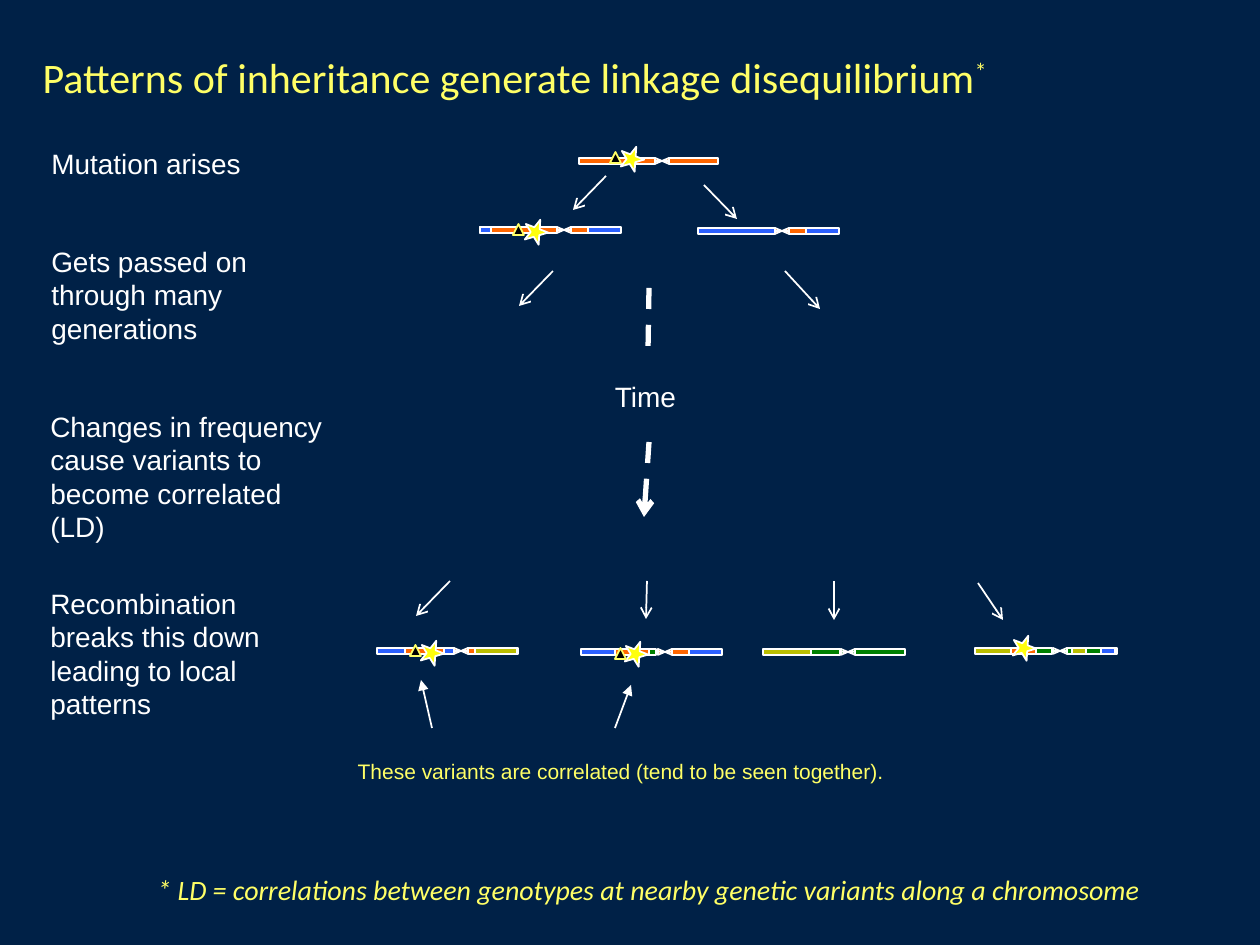
"""Builds the slide on how inheritance generates linkage disequilibrium."""
from dataclasses import dataclass

from pptx import Presentation
from pptx.dml.color import RGBColor
from pptx.enum.dml import MSO_LINE_DASH_STYLE as Dash
from pptx.enum.shapes import MSO_CONNECTOR as Connector, MSO_SHAPE as Preset
from pptx.enum.text import MSO_ANCHOR as Anchor, MSO_AUTO_SIZE as Fit, PP_ALIGN as Align
from pptx.oxml.ns import qn
from pptx.util import Emu, Pt

PX_PER_INCH = 126


def px(length):
    return Emu(round(length * 914400 / PX_PER_INCH))


def assign(target, values):
    for name, value in values.items():
        setattr(target, name, value)


@dataclass(frozen=True)
class Theme:
    navy: str = "002147"
    white: str = "FFFFFF"
    cream: str = "FFFF66"
    yellow: str = "FFFF0D"
    black: str = "000000"
    orange: str = "FF6600"
    blue: str = "2C60FF"
    gold: str = "BBBE00"
    green: str = "008000"
    body_font: str = "Arial"
    title_font: str = "Calibri"
    title_size: int = 24
    body_size: int = 16
    note_size: int = 12


class Diagram:
    def __init__(self, theme, slide):
        self.theme = theme
        self.slide = slide
        self.paint(slide.background.fill, theme.navy)

    def paint(self, fill, colour):
        fill.solid()
        fill.fore_color.rgb = RGBColor.from_string(colour)

    def outline(self, line, colour, width=1):
        self.paint(line.fill, colour)
        line.width = Pt(width)

    def add_words(self, paragraph, wording, colour, size, **style):
        run = paragraph.add_run()
        run.text = wording
        assign(run.font, {"name": self.theme.body_font, "size": Pt(size), **style})
        run.font.color.rgb = RGBColor.from_string(colour)
        return run

    def title(self, wording, mark, left, top, width, height):
        heading = self.slide.shapes.title
        assign(heading, {"left": px(left), "top": px(top),
                         "width": px(width), "height": px(height)})
        frame = heading.text_frame
        assign(frame, {"vertical_anchor": Anchor.BOTTOM, "word_wrap": True,
                       "auto_size": Fit.NONE})
        line = frame.paragraphs[0]
        line.alignment = Align.LEFT
        for part in (wording, mark):
            run = self.add_words(line, part, self.theme.cream, self.theme.title_size,
                                 name=self.theme.title_font)
        run.font._element.set("baseline", "30000")

    def text(self, wording, left, top, width, height, colour=None, size=None,
             align=Align.LEFT, wrap=True, frame_format=None, **style):
        box = self.slide.shapes.add_textbox(px(left), px(top), px(width), px(height))
        assign(box.text_frame, {"word_wrap": wrap, "auto_size": Fit.SHAPE_TO_FIT_TEXT,
                                **(frame_format or {})})
        paragraph = box.text_frame.paragraphs[0]
        paragraph.alignment = align
        self.add_words(paragraph, wording, colour or self.theme.white,
                       size or self.theme.body_size, **style)

    def shape(self, preset, left, top, width, height, colour, edge=None,
              rotation=0, flips=(), parent=None):
        shapes = (parent or self.slide).shapes
        item = shapes.add_shape(preset, px(left), px(top), px(width), px(height))
        item.shadow.inherit = False
        item.rotation = rotation
        self.paint(item.fill, colour)
        self.outline(item.line, edge or self.theme.white)
        for flip in flips:
            item._element.spPr.xfrm.set(flip, "1")

    def chromosome(self, left, top, waist, colour, segments):
        group = self.slide.shapes.add_group_shape()
        for across, x_flip in enumerate(((), ("flipH",))):
            for down, y_flip in enumerate(((), ("flipV",))):
                self.shape(Preset.RIGHT_TRIANGLE, left + waist + 7 * across,
                           top + 3 * down, 7, 3, colour,
                           flips=x_flip + y_flip, parent=group)
        for offset, width, band in segments:
            self.shape(Preset.RECTANGLE, left + offset, top, width, 6, band, parent=group)

    def star(self, left, top):
        self.shape(Preset.STAR_5_POINT, left, top, 24, 24, self.theme.yellow, rotation=21)

    def variant(self, left, top):
        self.shape(Preset.ISOSCELES_TRIANGLE, left, top, 11, 11,
                   self.theme.black, edge=self.theme.cream)

    def arrow(self, start, end, head="arrow", width=1, dash=None):
        link = self.slide.shapes.add_connector(
            Connector.STRAIGHT, *(px(value) for value in (*start, *end)))
        self.outline(link.line, self.theme.white, width)
        if dash:
            link.line.dash_style = dash
        if head:
            tail = link.line._get_or_add_ln()
            tail.append(tail.makeelement(qn("a:tailEnd"), {"type": head}))
        properties = link._element.spPr
        properties.append(properties.makeelement(qn("a:effectLst"), {}))


def main():
    deck = Presentation()
    deck.slide_width, deck.slide_height = px(1260), px(945)
    theme = Theme()
    diagram = Diagram(theme, deck.slides.add_slide(deck.slide_layouts[5]))
    orange, blue, gold, green = theme.orange, theme.blue, theme.gold, theme.green

    diagram.title("Patterns of inheritance generate linkage disequilibrium", "*",
                  30, 25, 1200, 83)
    diagram.text("Mutation arises", 39, 140, 217, 47, wrap=False)
    stages = (
        ("Gets passed on through many generations", 39, 238, 115),
        ("Changes in frequency cause variants to become correlated (LD)", 38, 403, 149),
        ("Recombination breaks this down leading to local patterns", 38, 580, 149),
    )
    for wording, left, top, height in stages:
        diagram.text(wording, left, top, 300, height)
    diagram.text("Time", 602, 373, 87, 47, align=Align.CENTER, wrap=False)

    right_arm = [(91, 49, orange), (108, 33, blue)]
    mosaic = [(0, 48, gold), (48, 29, green), (92, 50, green)]
    chromosomes = (
        (579, 158, 76, orange, [(0, 76, orange), (90, 49, orange)]),
        (480, 227, 77, orange, [(0, 77, orange), *right_arm, (0, 11, blue)]),
        (698, 228, 77, orange, [*right_arm, (0, 77, blue)]),
        (377, 648, 77, orange,
         [(0, 77, blue), (28, 39, orange), *right_arm, (98, 42, gold)]),
        (581, 649, 77, orange,
         [(54, 21, green), (34, 34, orange), *right_arm, (0, 34, blue)]),
        (763, 649, 78, green, mosaic),
        (975, 648, 78, green,
         [*mosaic, (36, 25, orange), (97, 14, gold), (126, 14, blue)]),
    )
    for chromosome in chromosomes:
        diagram.chromosome(*chromosome)
    for place in ((620, 146), (524, 219), (420, 640), (624, 641), (1012, 635)):
        diagram.star(*place)
    for place in ((610, 152), (513, 224), (410, 645), (615, 648)):
        diagram.variant(*place)

    descents = (
        ((606, 176), (573, 210)), ((704, 185), (737, 219)),
        ((553, 271), (519, 306)), ((785, 271), (820, 309)),
        ((450, 581), (416, 616)), ((647, 581), (646, 619)),
        ((834, 581), (834, 620)), ((978, 583), (1003, 620)),
    )
    for start, end in descents:
        diagram.arrow(start, end)
    diagram.arrow((649, 288), (648, 353), head=None, width=3, dash=Dash.DASH)
    diagram.arrow((649, 442), (644, 517), width=3, dash=Dash.DASH)
    for start, end in (((432, 728), (421, 680)), ((615, 728), (631, 685))):
        diagram.arrow(start, end, head="triangle")

    diagram.text("These variants are correlated (tend to be seen together).",
                 343, 752, 556, 38, theme.cream, theme.note_size, Align.CENTER, wrap=False)
    diagram.text("* LD = correlations between genotypes at nearby genetic variants "
                 "along a chromosome", 48, 829, 1201, 83, theme.cream, align=Align.CENTER,
                 frame_format={"vertical_anchor": Anchor.BOTTOM, "auto_size": Fit.NONE},
                 name=theme.title_font, italic=True)
    deck.save("out.pptx")


if __name__ == "__main__":
    main()
